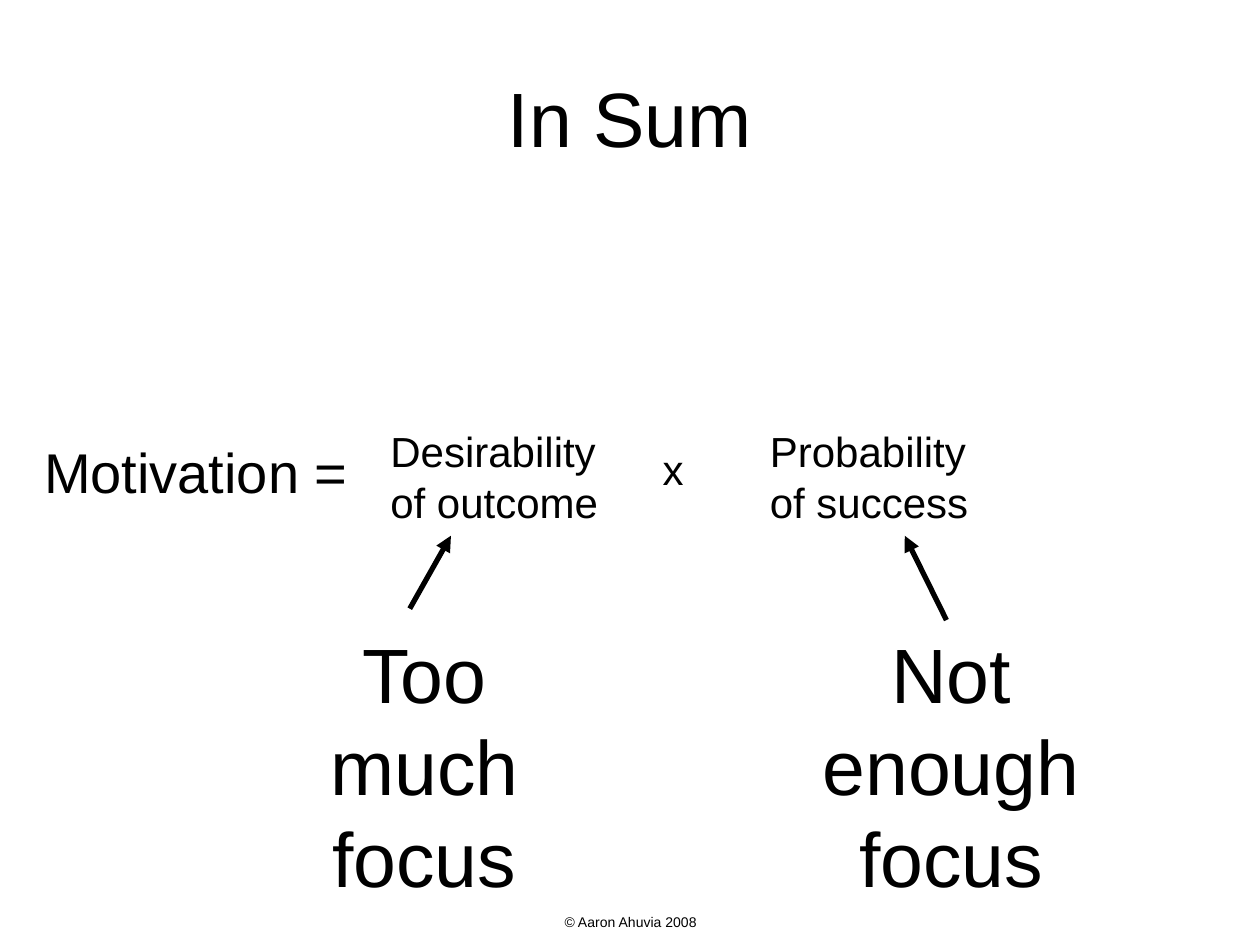
"""Builds the summary slide that shows motivation as a product of two factors."""
from lxml.etree import SubElement
from pptx import Presentation
from pptx.dml.color import RGBColor
from pptx.enum.shapes import MSO_CONNECTOR
from pptx.enum.text import MSO_ANCHOR, PP_ALIGN
from pptx.oxml.ns import qn
from pptx.util import Cm, Pt

BLACK = RGBColor(0, 0, 0)
WHITE = RGBColor(255, 255, 255)


class SlideBuilder:
    font_name = "Arial"
    ink = BLACK

    def __init__(self, deck):
        self.slide = deck.slides.add_slide(deck.slide_layouts[5])
        fill = self.slide.background.fill
        fill.solid()
        fill.fore_color.rgb = WHITE

    def set_text(self, box, text, size, align, anchor=MSO_ANCHOR.TOP):
        frame = box.text_frame
        frame.word_wrap = True
        frame.vertical_anchor = anchor
        para = frame.paragraphs[0]
        para.text = text
        para.alignment = align
        para.font.name = self.font_name
        para.font.size = Pt(size)
        para.font.color.rgb = self.ink

    def title(self, text, left, top, width, height):
        box = self.slide.shapes.title
        box.left, box.top, box.width, box.height = map(Cm, (left, top, width, height))
        self.set_text(box, text, 44, PP_ALIGN.CENTER, MSO_ANCHOR.MIDDLE)

    def text(self, text, left, top, width, height, size, align=PP_ALIGN.LEFT):
        box = self.slide.shapes.add_textbox(*map(Cm, (left, top, width, height)))
        self.set_text(box, text, size, align)

    def arrow(self, start_x, start_y, end_x, end_y):
        ends = map(Cm, (start_x, start_y, end_x, end_y))
        arrow = self.slide.shapes.add_connector(MSO_CONNECTOR.STRAIGHT, *ends)
        arrow.line.color.rgb = self.ink
        arrow.line.width = Pt(3)
        properties = arrow._element.spPr
        SubElement(properties.find(qn("a:ln")), qn("a:tailEnd"), type="triangle")
        SubElement(properties, qn("a:effectLst"))


def main():
    deck = Presentation()
    deck.slide_width, deck.slide_height = Cm(25.4), Cm(19.05)
    page = SlideBuilder(deck)

    page.title("In Sum", 1.27, 0.76, 22.86, 3.18)
    page.text("Motivation =", 0.64, 8.69, 6.78, 1.9, 32)
    page.text("x", 13.11, 8.81, 1.27, 1.27, 24)

    factors = [
        ("Desirability of outcome", 7.62, "Too much focus", 5.28),
        ("Probability of success", 15.27, "Not enough focus", 15.9),
    ]
    for factor, factor_left, focus, focus_left in factors:
        page.text(factor, factor_left, 8.46, 4.88, 2.29, 24)
        page.text(focus, focus_left, 12.5, 6.55, 5.84, 44, PP_ALIGN.CENTER)

    page.arrow(8.26, 12.27, 9.09, 10.8)
    page.arrow(19.08, 12.5, 18.24, 10.8)

    page.text("© Aaron Ahuvia 2008", 8.69, 18.29, 8.05, 0.38, 8, PP_ALIGN.CENTER)
    deck.save("out.pptx")


if __name__ == "__main__":
    main()
